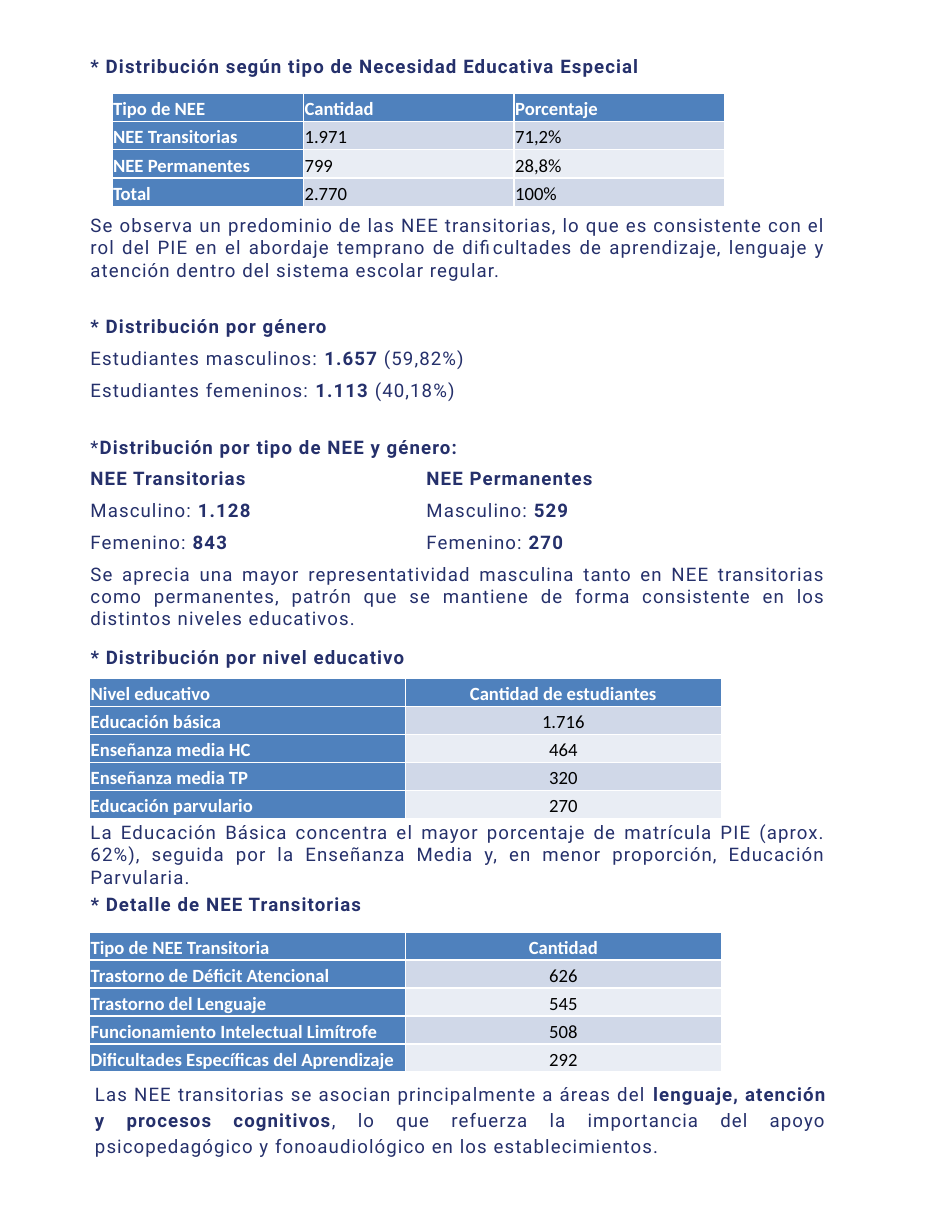
from pptx import Presentation
from pptx.dml.color import RGBColor
from pptx.enum.text import MSO_ANCHOR as Anchor, PP_ALIGN as Align
from pptx.oxml import parse_xml
from pptx.oxml.ns import nsdecls, qn
from pptx.util import Inches, Pt

NAVY = RGBColor(0x25, 0x30, 0x6B)
BLUE = RGBColor(0x4F, 0x81, 0xBD)
BAND_DARK = RGBColor(0xD0, 0xD8, 0xE8)
BAND_LIGHT = RGBColor(0xE9, 0xED, 0xF4)
WHITE = RGBColor(0xFF, 0xFF, 0xFF)
BLACK = RGBColor(0, 0, 0)


class Report:
    text_font = "Roboto"
    table_font = "Calibri"
    size = Pt(12)
    letter_spacing = "70"
    row_height = Inches(0.24)
    cell_margin = Inches(0.01)
    column_tab = Inches(3)

    def __init__(self, slide):
        self.slide = slide

    def fill_paragraph(self, paragraph, text):
        """Set text in the body style; parts between bars are bold."""
        if "\t" in text:
            properties = paragraph._p.get_or_add_pPr()
            properties.append(parse_xml(
                f'<a:tabLst {nsdecls("a")}><a:tab pos="{self.column_tab}" algn="l"/></a:tabLst>'))
        font = paragraph.font
        font.name, font.size = self.text_font, self.size
        font.color.rgb = NAVY
        paragraph._p.pPr.find(qn("a:defRPr")).set("spc", self.letter_spacing)
        for index, part in enumerate(text.split("|")):
            if part:
                run = paragraph.add_run()
                run.text = part
                run.font.bold = index % 2 == 1

    def text(self, left, top, width, height, items, anchor=Anchor.TOP,
             align=Align.JUSTIFY, line_spacing=None):
        """Add a text box; items are (space before in points, text)."""
        box = self.slide.shapes.add_textbox(
            Inches(left), Inches(top), Inches(width), Inches(height))
        frame = box.text_frame
        frame.word_wrap = True
        frame.vertical_anchor = anchor
        for index, (space, text) in enumerate(items):
            paragraph = frame.add_paragraph() if index else frame.paragraphs[0]
            paragraph.alignment = align
            if line_spacing:
                paragraph.line_spacing = line_spacing
            if space:
                paragraph.space_before = Pt(space)
            self.fill_paragraph(paragraph, text)

    def table(self, left, top, widths, rows, value_align):
        """Add a table with a blue header row and a blue first column."""
        table = self.slide.shapes.add_table(
            len(rows), len(widths), Inches(left), Inches(top),
            Inches(sum(widths)), self.row_height * len(rows)).table
        table.first_col = True
        for column, width in zip(table.columns, widths):
            column.width = Inches(width)
        for row_index, values in enumerate(rows):
            table.rows[row_index].height = self.row_height
            band = BAND_DARK if row_index % 2 else BAND_LIGHT
            for column_index, value in enumerate(values):
                heading = row_index == 0 or column_index == 0
                cell = table.cell(row_index, column_index)
                cell.vertical_anchor = Anchor.MIDDLE
                cell.margin_left = cell.margin_right = self.cell_margin
                cell.margin_top = cell.margin_bottom = self.cell_margin
                cell.fill.solid()
                cell.fill.fore_color.rgb = BLUE if heading else band
                cell.text = value
                paragraph = cell.text_frame.paragraphs[0]
                paragraph.alignment = value_align if column_index else Align.LEFT
                paragraph.line_spacing = 1.15
                paragraph.space_after = Pt(8)
                font = paragraph.font
                font.name, font.size, font.bold = self.table_font, self.size, heading
                font.color.rgb = WHITE if heading else BLACK


def main():
    presentation = Presentation()
    presentation.slide_width, presentation.slide_height = Inches(8.5), Inches(11)
    report = Report(presentation.slides.add_slide(presentation.slide_layouts[6]))

    # Types of need, gender, and both together
    report.table(1, 0.83, [1.71, 1.88, 1.88], [
        ("Tipo de NEE", "Cantidad", "Porcentaje"),
        ("NEE Transitorias", "1.971", "71,2%"),
        ("NEE Permanentes", "799", "28,8%"),
        ("Total", "2.770", "100%"),
    ], Align.LEFT)
    line, section, after_table = 6, 22, 88
    report.text(0.71, 0.39, 6.77, 5.33, [
        (0, "|* Distribución según tipo de Necesidad Educativa Especial|"),
        (after_table, "Se observa un predominio de las NEE transitorias, lo que es consistente "
                      "con el rol del PIE en el abordaje temprano de dificultades de aprendizaje, "
                      "lenguaje y atención dentro del sistema escolar regular."),
        (section, "|* Distribución por género|"),
        (line, "Estudiantes masculinos:| 1.657 |(59,82%)"),
        (line, "Estudiantes femeninos: |1.113 |(40,18%)"),
        (section, "*|Distribución por tipo de NEE y género:|"),
        (line, "|NEE Transitorias\tNEE Permanentes|"),
        (line, "Masculino: |1.128\t|Masculino:| 529|"),
        (line, "Femenino: |843\t|Femenino: |270|"),
        (line, "Se aprecia una mayor representatividad masculina tanto en NEE transitorias como "
               "permanentes, patrón que se mantiene de forma consistente en los distintos "
               "niveles educativos."),
    ], anchor=Anchor.MIDDLE)

    # Educational level
    report.table(0.8, 6.06, [2.82, 2.82], [
        ("Nivel educativo", "Cantidad de estudiantes"),
        ("Educación básica", "1.716"),
        ("Enseñanza media HC", "464"),
        ("Enseñanza media TP", "320"),
        ("Educación parvulario", "270"),
    ], Align.CENTER)
    report.text(0.71, 5.72, 6.88, 0.61, [(0, "|* Distribución por nivel educativo|")])
    report.text(0.71, 7.28, 6.77, 0.5, [
        (0, "La Educación Básica concentra el mayor porcentaje de matrícula PIE (aprox. 62%), "
            "seguida por la Enseñanza Media y, en menor proporción, Educación Parvularia."),
    ])

    # Detail of transitory needs
    report.table(0.8, 8.32, [2.82, 2.82], [
        ("Tipo de NEE Transitoria", "Cantidad"),
        ("Trastorno de Déficit Atencional", "626"),
        ("Trastorno del Lenguaje", "545"),
        ("Funcionamiento Intelectual Limítrofe", "508"),
        ("Dificultades Específicas del Aprendizaje", "292"),
    ], Align.CENTER)
    report.text(0.71, 7.89, 4.25, 0.32, [(0, "|* Detalle de NEE Transitorias|")],
                align=Align.LEFT, line_spacing=1.15)
    report.text(0.75, 9.59, 6.73, 0.79, [
        (0, "Las NEE transitorias se asocian principalmente a áreas del |lenguaje, atención y "
            "procesos cognitivos|, lo que refuerza la importancia del apoyo psicopedagógico y "
            "fonoaudiológico en los establecimientos."),
    ], line_spacing=1.15)

    presentation.save("out.pptx")


if __name__ == "__main__":
    main()
